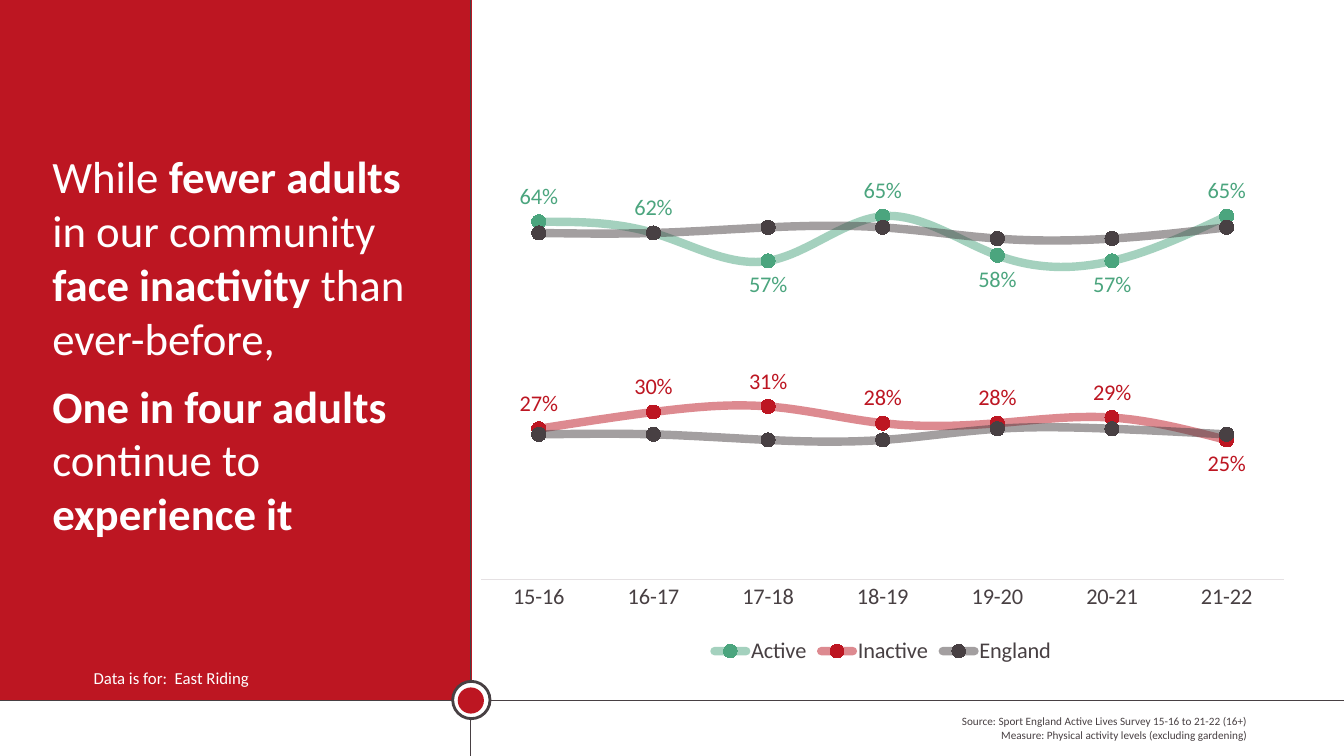
import pptx
import pptx.chart.data
import pptx.dml.color
import pptx.enum.chart
import pptx.enum.shapes
import pptx.enum.text
import pptx.oxml
import pptx.oxml.ns
import pptx.util
from pptx.util import Inches

COLORS = {"red": "BD1622", "green": "4BA57E", "dark": "484043",
          "white": "FFFFFF", "axis": "E5E1E3"}
YEARS = ["15-16", "16-17", "17-18", "18-19", "19-20", "20-21", "21-22"]
SERIES = [
    ("Active", "green", [0.64, 0.62, 0.57, 0.65, 0.58, 0.57, 0.65], [2, 4, 5]),
    ("Inactive", "red", [0.27, 0.3, 0.31, 0.28, 0.28, 0.29, 0.25], [6]),
    ("England", "dark", [0.26, 0.26, 0.25, 0.25, 0.27, 0.27, 0.26], None),
    ("Series 4", "dark", [0.62, 0.62, 0.63, 0.63, 0.61, 0.61, 0.63], None),
]
MESSAGE = [
    [("While ", False), ("fewer adults ", True), ("in our community ", False),
     ("face\u00a0inactivity ", True), ("than ever-before,\u00a0", False)],
    [("One in four adults ", True), ("continue to ", False), ("experience it", True)],
]


def rgb(name):
    """Return the named colour."""
    return pptx.dml.color.RGBColor.from_string(COLORS[name])


def set_font(font, size, color, bold=None):
    """Apply the slide's font."""
    font.name = "Calibri"
    font.size = pptx.util.Pt(size)
    font.color.rgb = rgb(color)
    font.bold = bold


def add_filled(s, kind, left, top, width, height, fill, line=None):
    """Add a filled preset shape with an optional 2 pt outline."""
    sp = s.shapes.add_shape(kind, Inches(left), Inches(top), Inches(width), Inches(height))
    sp.shadow.inherit = False
    sp.fill.solid()
    sp.fill.fore_color.rgb = rgb(fill)
    if line:
        sp.line.color.rgb = rgb(line)
        sp.line.width = pptx.util.Pt(2)
    else:
        sp.line.fill.background()


def add_rule(s, x1, y1, x2, y2):
    """Add a thin dark straight line."""
    line = s.shapes.add_connector(pptx.enum.shapes.MSO_CONNECTOR.STRAIGHT,
                                  Inches(x1), Inches(y1), Inches(x2), Inches(y2))
    line.line.color.rgb = rgb("dark")
    line.line.width = pptx.util.Pt(0.5)
    pptx.oxml.ns.qn("a:effectLst")
    line._element.spPr.append(pptx.oxml.parse_xml(
        "<a:effectLst %s/>" % pptx.oxml.ns.nsdecls("a")))


def add_text(s, left, top, width, height, paragraphs, size, color, align=None, gap=0):
    """Add a wrapped text box of paragraphs made of (text, bold) runs."""
    tf = s.shapes.add_textbox(Inches(left), Inches(top), Inches(width), Inches(height)).text_frame
    tf.word_wrap = True
    for i, runs in enumerate(paragraphs):
        p = tf.add_paragraph() if i else tf.paragraphs[0]
        p.alignment = align
        if i:
            p.space_before = pptx.util.Pt(gap)
        for text, bold in runs:
            r = p.add_run()
            r.text = text
            set_font(r.font, size, color, bold)


def style_series(series, color, below):
    """Style a smooth half-transparent line, its markers and its labels."""
    series.smooth = True
    line = series.format.line
    line.color.rgb = rgb(color)
    line.width = pptx.util.Pt(6)
    clr = line._ln.find(".//" + pptx.oxml.ns.qn("a:srgbClr"))
    clr.append(pptx.oxml.parse_xml(
        '<a:alpha %s val="50000"/>' % pptx.oxml.ns.nsdecls("a")))
    line._ln.set("cap", "rnd")
    marker = series.marker
    marker.style = pptx.enum.chart.XL_MARKER_STYLE.CIRCLE
    marker.size = 10
    marker.format.fill.solid()
    marker.format.fill.fore_color.rgb = rgb(color)
    marker.format.line.fill.background()
    if below is None:
        return
    labels = series.data_labels
    labels.show_value = True
    labels.number_format = "0%"
    labels.number_format_is_linked = False
    labels.position = pptx.enum.chart.XL_LABEL_POSITION.ABOVE
    set_font(labels.font, 16, color)
    for i in below:
        label = series.points[i].data_label
        set_font(label.font, 16, color)
        label.position = pptx.enum.chart.XL_LABEL_POSITION.BELOW


def style_axes(chart):
    """Keep only the category axis visible."""
    none = pptx.enum.chart.XL_TICK_MARK.NONE
    cat, val = chart.category_axis, chart.value_axis
    cat.major_tick_mark = none
    cat.format.line.color.rgb = rgb("axis")
    cat.format.line.width = pptx.util.Pt(0.75)
    set_font(cat.tick_labels.font, 16, "dark")
    val.minimum_scale, val.maximum_scale = 0, 0.75
    val.has_major_gridlines = False
    val.visible = False


def add_activity_chart(s):
    """Add the line chart of activity levels by year."""
    data = pptx.chart.data.CategoryChartData(number_format="0%")
    data.categories = YEARS
    for name, _, values, _ in SERIES:
        data.add_series(name, values)
    chart = s.shapes.add_chart(pptx.enum.chart.XL_CHART_TYPE.LINE_MARKERS, Inches(4.77),
                               Inches(1.55), Inches(7.97), Inches(5.09), data).chart
    set_font(chart.font, 16, "dark")
    chart.has_title = False
    chart.plots[0].vary_by_categories = False
    for series, (_, color, _, below) in zip(chart.plots[0].series, SERIES):
        style_series(series, color, below)
    style_axes(chart)
    chart.has_legend = True
    legend = chart.legend
    legend.position = pptx.enum.chart.XL_LEGEND_POSITION.BOTTOM
    legend.include_in_layout = False
    set_font(legend.font, 16, "dark")
    ns = pptx.oxml.ns.nsdecls("c")
    legend._element.find(pptx.oxml.ns.qn("c:legendPos")).addnext(pptx.oxml.parse_xml(
        '<c:legendEntry %s><c:idx val="3"/><c:delete val="1"/></c:legendEntry>' % ns))
    area = chart._chartSpace.chart.plotArea
    for old in area.findall(pptx.oxml.ns.qn("c:layout")):
        area.remove(old)
    area.insert(0, pptx.oxml.parse_xml(
        '<c:layout %s><c:manualLayout><c:layoutTarget val="inner"/>'
        '<c:xMode val="edge"/><c:yMode val="edge"/><c:x val="0"/><c:y val="0.008"/>'
        '<c:w val="1"/><c:h val="0.818"/></c:manualLayout></c:layout>' % ns))


def main():
    """Build the slide and save it."""
    prs = pptx.Presentation()
    prs.slide_width, prs.slide_height = Inches(13.33), Inches(7.5)
    s = prs.slides.add_slide(prs.slide_layouts[6])
    shape = pptx.enum.shapes.MSO_SHAPE
    add_filled(s, shape.RECTANGLE, 0, 0, 4.68, 6.95, "red")
    add_rule(s, 4.67, 0, 4.67, 7.5)
    add_rule(s, 0, 6.95, 13.33, 6.95)
    add_filled(s, shape.OVAL, 4.49, 6.76, 0.37, 0.37, "white", "dark")
    add_filled(s, shape.OVAL, 4.54, 6.82, 0.26, 0.26, "red")
    add_text(s, 6, 7.04, 6.47, 0.37,
             [[("Source: Sport England Active Lives Survey 15-16 to 21-22 (16+)", None)],
              [("Measure: Physical activity levels (excluding gardening)", None)]],
             8, "dark", pptx.enum.text.PP_ALIGN.RIGHT)
    add_text(s, 0.83, 6.58, 3.63, 0.3, [[("Data is for:  East Riding", None)]], 12, "white")
    add_text(s, 0.42, 1.43, 4.09, 3.39, MESSAGE, 32, "white", gap=10)
    add_activity_chart(s)
    prs.save("out.pptx")


if __name__ == "__main__":
    main()
